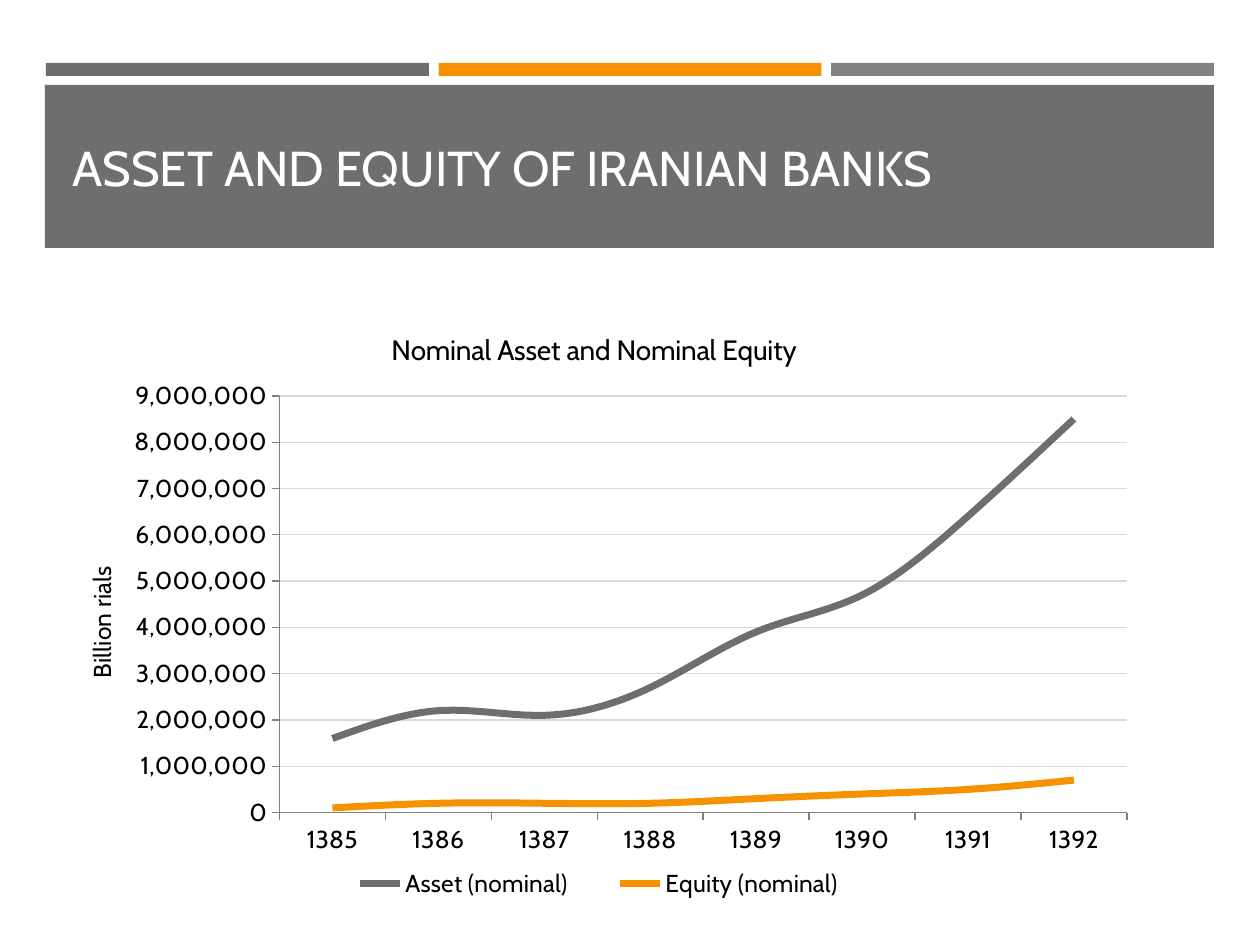
from pptx import Presentation
from pptx.chart.data import CategoryChartData
from pptx.dml.color import RGBColor
from pptx.enum.chart import XL_CHART_TYPE, XL_LEGEND_POSITION, XL_TICK_MARK
from pptx.enum.shapes import MSO_SHAPE
from pptx.enum.text import MSO_ANCHOR, MSO_AUTO_SIZE, PP_ALIGN
from pptx.oxml import parse_xml
from pptx.oxml.ns import nsdecls
from pptx.util import Emu, Pt

SCALE = 914400 / 126
FONT = "Cabin"
GREY = RGBColor(0x6E, 0x6E, 0x6E)
LIGHT_GREY = RGBColor(0x83, 0x83, 0x83)
ORANGE = RGBColor(0xF6, 0x92, 0x00)
GRID = RGBColor(0xD9, 0xD9, 0xD9)
AXIS = RGBColor(0x80, 0x80, 0x80)
BLACK = RGBColor(0, 0, 0)
WHITE = RGBColor(0xFF, 0xFF, 0xFF)

CHART_FRAME = (47, 296, 1102, 621)
YEARS = [str(year) for year in range(1385, 1393)]
SERIES = {
    "Asset (nominal)": (GREY, [1600000, 2200000, 2100000, 2700000,
                               3900000, 4700000, 6400000, 8500000]),
    "Equity (nominal)": (ORANGE, [100000, 200000, 200000, 200000,
                                  300000, 400000, 500000, 700000]),
}


def px(length):
    return Emu(round(length * SCALE))


def format_font(font, size, color):
    values = {"name": FONT, "size": Pt(size), "bold": False}
    for name, value in values.items():
        setattr(font, name, value)
    font.color.rgb = color


def format_line(line, color, width):
    line.color.rgb = color
    line.width = Pt(width)


def add_bar(page, frame, color):
    bar = page.shapes.add_shape(MSO_SHAPE.RECTANGLE, *map(px, frame))
    bar.shadow.inherit = False
    bar.fill.solid()
    bar.fill.fore_color.rgb = color
    bar.line.fill.background()


def set_title(page, text, frame):
    box = page.shapes.title
    for name, value in zip(("left", "top", "width", "height"), frame):
        setattr(box, name, px(value))
    text_frame = box.text_frame
    values = {"text": text, "word_wrap": True, "auto_size": MSO_AUTO_SIZE.NONE,
              "vertical_anchor": MSO_ANCHOR.MIDDLE}
    for name, value in values.items():
        setattr(text_frame, name, value)
    para = text_frame.paragraphs[0]
    para.alignment = PP_ALIGN.LEFT
    format_font(para.runs[0].font, 28, WHITE)
    # Keep the title in front of its band
    page.shapes.element.append(box.element)


def set_caption(text_frame, text, size):
    text_frame.text = text
    format_font(text_frame.paragraphs[0].runs[0].font, size, BLACK)


def place_part(parent, index, left, top, width=None, height=None, inner=False):
    """Place a chart part, given in slide px, as fractions of the chart."""
    for old in parent.xpath("c:layout"):
        parent.remove(old)
    frame_left, frame_top, frame_width, frame_height = CHART_FRAME
    settings = [("layoutTarget", "inner")] if inner else []
    settings += [("xMode", "edge"), ("yMode", "edge"),
                 ("x", round((left - frame_left) / frame_width, 3)),
                 ("y", round((top - frame_top) / frame_height, 3))]
    if width:
        settings += [("w", round(width / frame_width, 3)),
                     ("h", round(height / frame_height, 3))]
    tags = "".join(f'<c:{name} val="{value}"/>' for name, value in settings)
    parent.insert(index, parse_xml(
        f'<c:layout {nsdecls("c")}><c:manualLayout>{tags}</c:manualLayout></c:layout>'))


def format_axes(chart):
    for axis in (chart.category_axis, chart.value_axis):
        axis.major_tick_mark = XL_TICK_MARK.OUTSIDE
        axis.minor_tick_mark = XL_TICK_MARK.NONE
        format_line(axis.format.line, AXIS, 0.75)
        format_font(axis.tick_labels.font, 14, BLACK)
    axis = chart.value_axis
    axis.minimum_scale, axis.maximum_scale, axis.major_unit = 0, 9000000, 1000000
    axis.tick_labels.number_format = "#,##0"
    axis.tick_labels.number_format_is_linked = False
    axis.has_major_gridlines = True
    format_line(axis.major_gridlines.format.line, GRID, 0.75)
    set_caption(axis.axis_title.text_frame, "Billion rials", 14)


def add_line_chart(page):
    data = CategoryChartData(number_format="#,##0")
    data.categories = YEARS
    for name, (color, values) in SERIES.items():
        data.add_series(name, values)
    chart = page.shapes.add_chart(
        XL_CHART_TYPE.LINE, *map(px, CHART_FRAME), data).chart
    format_font(chart.font, 14, BLACK)
    chart.plots[0].vary_by_categories = False
    for series in chart.plots[0].series:
        series.smooth = True
        format_line(series.format.line, SERIES[series.name][0], 4)
    format_axes(chart)

    # Title and legend
    chart.has_title = True
    set_caption(chart.chart_title.text_frame, "Nominal Asset and Nominal Equity", 16)
    chart.has_legend = True
    chart.legend.position = XL_LEGEND_POSITION.BOTTOM
    chart.legend.include_in_layout = False
    format_font(chart.legend.font, 14, BLACK)

    # Positions inside the chart
    def part(query):
        return chart.element.xpath(query)[0]

    place_part(part("c:chart/c:title"), 1, 386, 326)
    place_part(part(".//c:valAx/c:title"), 1, 80, 562)
    place_part(part(".//c:plotArea"), 0, 280, 396, 847, 417, inner=True)
    place_part(part(".//c:legend"), 1, 316, 865, 566, 38)


def main():
    deck = Presentation()
    deck.slide_width, deck.slide_height = px(1260), px(945)
    page = deck.slides.add_slide(deck.slide_layouts[5])

    # Three accent bars over the title band
    for column, color in enumerate((GREY, ORANGE, LIGHT_GREY)):
        add_bar(page, (46 + column * 392.5, 63, 383, 13), color)
    add_bar(page, (45, 85, 1169, 163), GREY)
    set_title(page, "ASSET AND EQUITY OF IRANIAN BANKS", (60, 97, 1140, 140))

    add_line_chart(page)
    deck.save("out.pptx")


if __name__ == "__main__":
    main()
